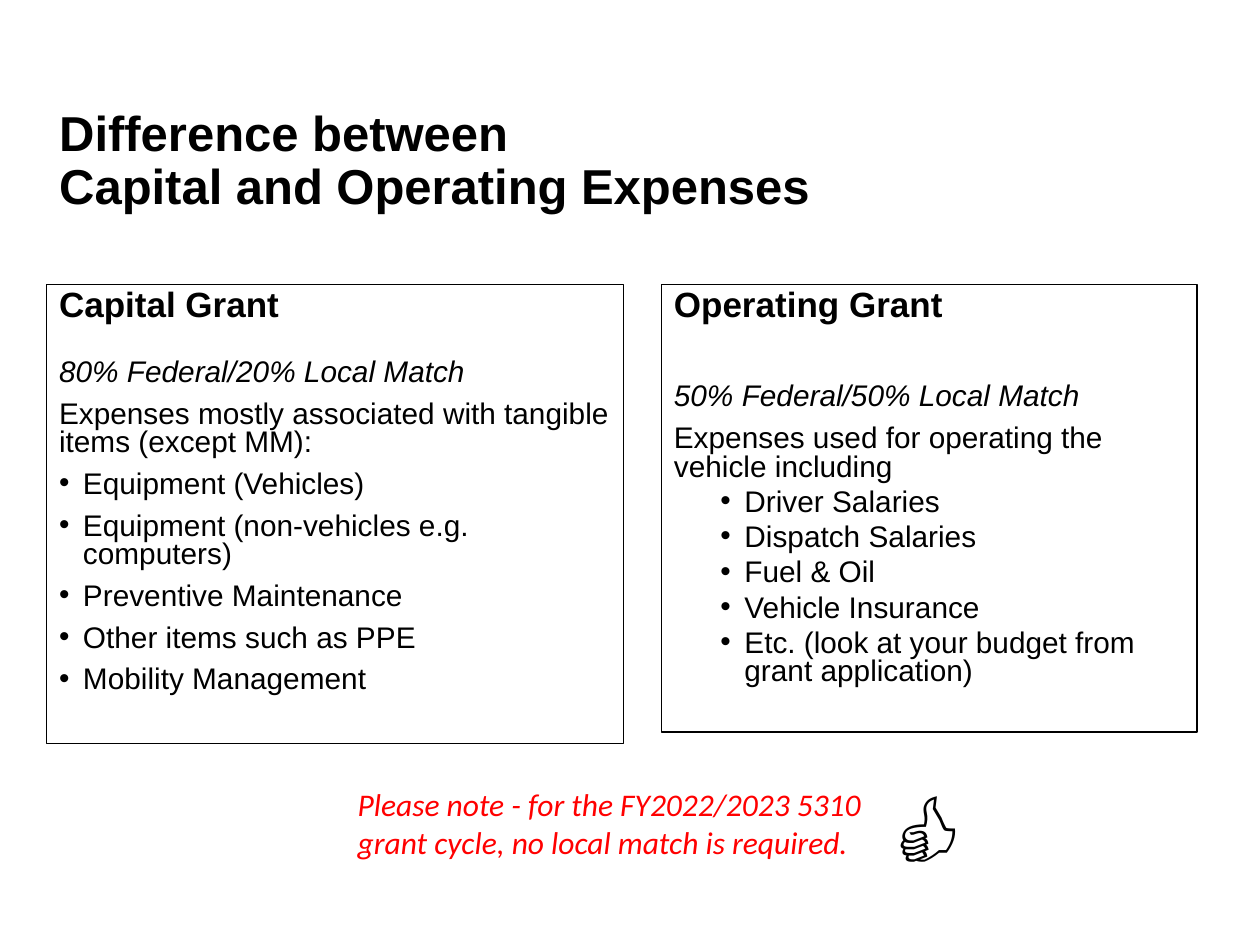
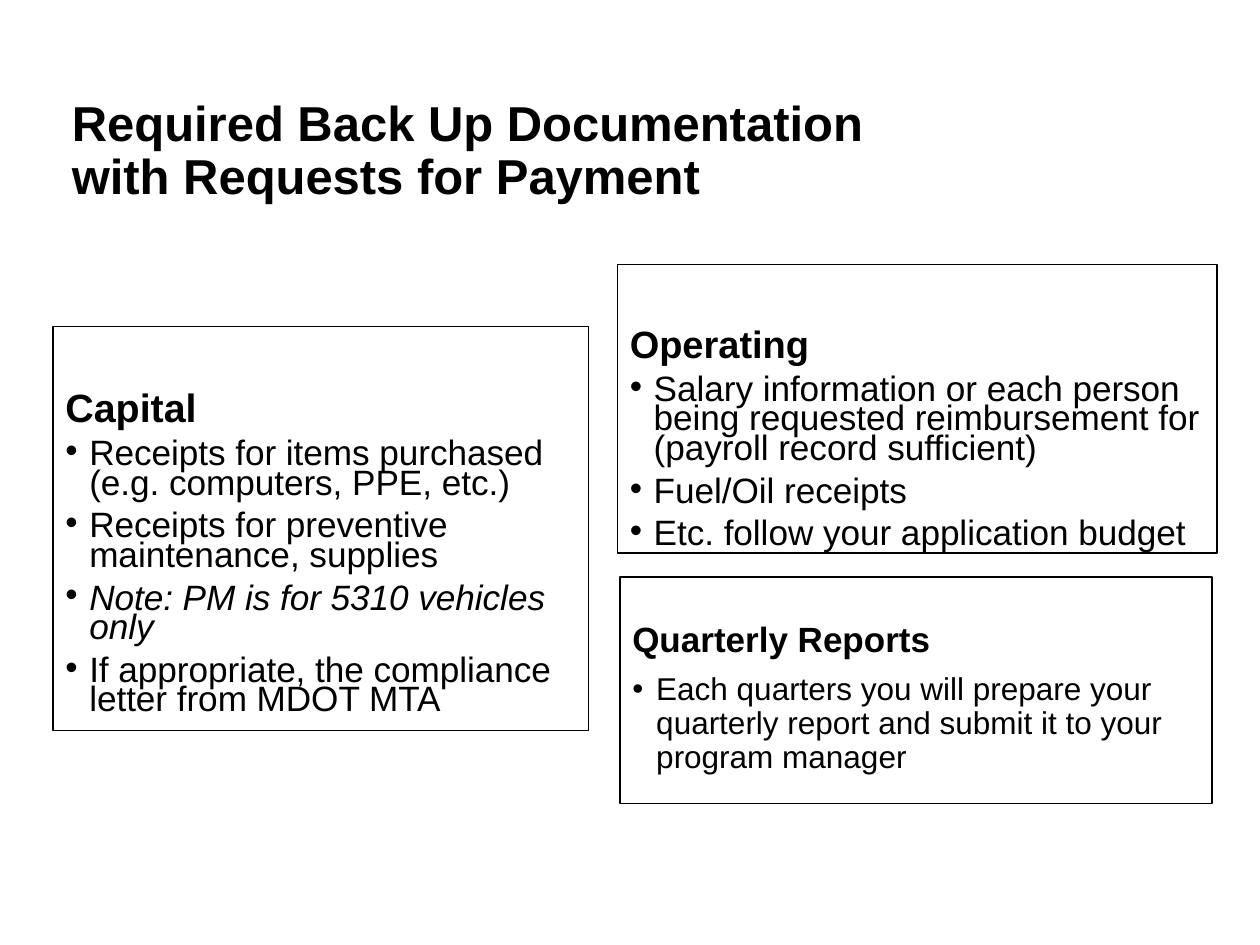
from dataclasses import dataclass

from lxml import etree
from pptx import Presentation
from pptx import util as u
from pptx.dml.color import RGBColor
from pptx.enum import shapes, text
from pptx.oxml import ns

BLACK = RGBColor(0x00, 0x00, 0x00)
RED = RGBColor(0xFF, 0x00, 0x00)
SCALE = 9144
HANG = 19
BODY = "Arial"
NOTE = "Calibri"


def px(n: int) -> u.Emu:
    return u.Emu(n * SCALE)


@dataclass(frozen=True)
class Area:
    left: int
    top: int
    width: int
    height: int

    def emu(self) -> list:
        return [px(n) for n in (self.left, self.top, self.width, self.height)]


@dataclass(frozen=True)
class Line:
    words: str
    size: float
    bold: bool = False
    slant: bool = False
    indent: int = 0
    before: float = 7.5
    face: str = BODY
    color: RGBColor = BLACK


@dataclass(frozen=True)
class Panel:
    area: Area
    lines: list[Line]
    pitch: float
    inset: int = 5


@dataclass(frozen=True)
class Page:
    title: str
    area: Area
    panels: list[Panel]
    notes: list[Panel]


def points(items: list[str], size: float, indent: int = HANG,
           before: float = 7.5) -> list[Line]:
    return [Line(item, size, indent=indent, before=before) for item in items]


def add_dot(para, indent: int) -> None:
    props = para._p.get_or_add_pPr()
    props.set("marL", str(px(indent)))
    props.set("indent", str(-px(HANG)))
    font = etree.SubElement(props, ns.qn("a:buFont"))
    font.set("typeface", BODY)
    dot = etree.SubElement(props, ns.qn("a:buChar"))
    dot.set("char", "•")


def write(frame, lines: list[Line], pitch: float) -> None:
    frame.word_wrap = True
    frame.auto_size = text.MSO_AUTO_SIZE.NONE
    for i, line in enumerate(lines):
        para = frame.add_paragraph() if i else frame.paragraphs[0]
        para.text = line.words
        if line.indent:
            add_dot(para, line.indent)
        para.alignment = text.PP_ALIGN.LEFT
        para.line_spacing = pitch
        para.space_before = u.Pt(line.before if i else 0)
        font = para.font
        font.name = line.face
        font.size = u.Pt(line.size)
        font.bold = line.bold
        font.italic = line.slant
        font.color.rgb = line.color


def add_panel(slide, panel: Panel) -> None:
    box = slide.shapes.add_shape(shapes.MSO_SHAPE.RECTANGLE, *panel.area.emu())
    box.shadow.inherit = False
    box.fill.background()
    box.line.color.rgb = BLACK
    box.line.width = u.Pt(0.75)
    frame = box.text_frame
    frame.vertical_anchor = text.MSO_ANCHOR.TOP
    frame.margin_top = px(panel.inset)
    write(frame, panel.lines, panel.pitch)


def add_note(slide, note: Panel) -> None:
    box = slide.shapes.add_textbox(*note.area.emu())
    write(box.text_frame, note.lines, note.pitch)


def add_page(deck, page: Page) -> None:
    slide = deck.slides.add_slide(deck.slide_layouts[5])
    title = slide.shapes.title
    title.left, title.top, title.width, title.height = page.area.emu()
    title.text_frame.vertical_anchor = text.MSO_ANCHOR.MIDDLE
    write(title.text_frame, [Line(page.title, 28, bold=True)], 0.9)
    for panel in page.panels:
        add_panel(slide, panel)
    for note in page.notes:
        add_note(slide, note)


COSTS = Page(
    "Difference between\vCapital and Operating Expenses",
    Area(37, 56, 857, 145),
    [
        Panel(Area(525, 226, 425, 355), [
            Line("Operating Grant", 20, bold=True),
            Line("50% Federal/50% Local Match", 17, slant=True, before=34),
            Line("Expenses used for operating the vehicle including", 17),
            *points([
                "Driver Salaries",
                "Dispatch Salaries",
                "Fuel & Oil",
                "Vehicle Insurance",
                "Etc. (look at your budget from grant application)",
            ], 17, indent=56, before=3.8),
        ], 0.8),
        Panel(Area(37, 226, 458, 364), [
            Line("Capital Grant", 20, bold=True),
            Line("80% Federal/20% Local Match", 17, slant=True, before=20),
            Line("Expenses mostly associated with tangible items (except MM):",
                 17),
            *points([
                "Equipment (Vehicles)",
                "Equipment (non-vehicles e.g. computers)",
                "Preventive Maintenance",
                "Other items such as PPE",
                "Mobility Management",
            ], 17),
        ], 0.8),
    ],
    [
        Panel(Area(274, 618, 469, 71), [
            Line("Please note - for the FY2022/2023 5310 grant cycle, "
                 "no local match is required.",
                 18, slant=True, face=NOTE, color=RED),
        ], 1.0),
        Panel(Area(689, 606, 108, 111), [
            Line("👍", 60, slant=True, face=NOTE),
        ], 1.0),
    ],
)

PAPERS = Page(
    "Required Back Up Documentation\vwith Requests for Payment",
    Area(47, 48, 840, 145),
    [
        Panel(Area(42, 259, 425, 321), [
            Line("Capital", 22.5, bold=True),
            *points([
                "Receipts for items purchased (e.g. computers, PPE, etc.)",
                "Receipts for preventive maintenance, supplies",
            ], 20.1),
            Line("Note: PM is for 5310 vehicles only", 20.1, slant=True,
                 indent=HANG),
            *points(["If appropriate, the compliance letter from MDOT MTA"],
                    20.1),
        ], 0.7, inset=55),
        Panel(Area(490, 210, 476, 229), [
            Line("Operating", 21.7, bold=True),
            *points([
                "Salary information or each person being requested "
                "reimbursement for (payroll record sufficient)",
                "Fuel/Oil receipts",
                "Etc. follow your application budget",
            ], 20.1),
        ], 0.7, inset=54),
        Panel(Area(492, 458, 470, 180), [
            Line("Quarterly Reports", 20, bold=True),
            *points([
                "Each quarters you will prepare your quarterly report and "
                "submit it to your program manager",
            ], 18),
        ], 0.9, inset=36),
    ],
    [],
)


def main() -> None:
    deck = Presentation()
    deck.slide_width = px(1000)
    deck.slide_height = px(750)
    for page in (COSTS, PAPERS):
        add_page(deck, page)
    deck.save("out.pptx")


if __name__ == "__main__":
    main()
